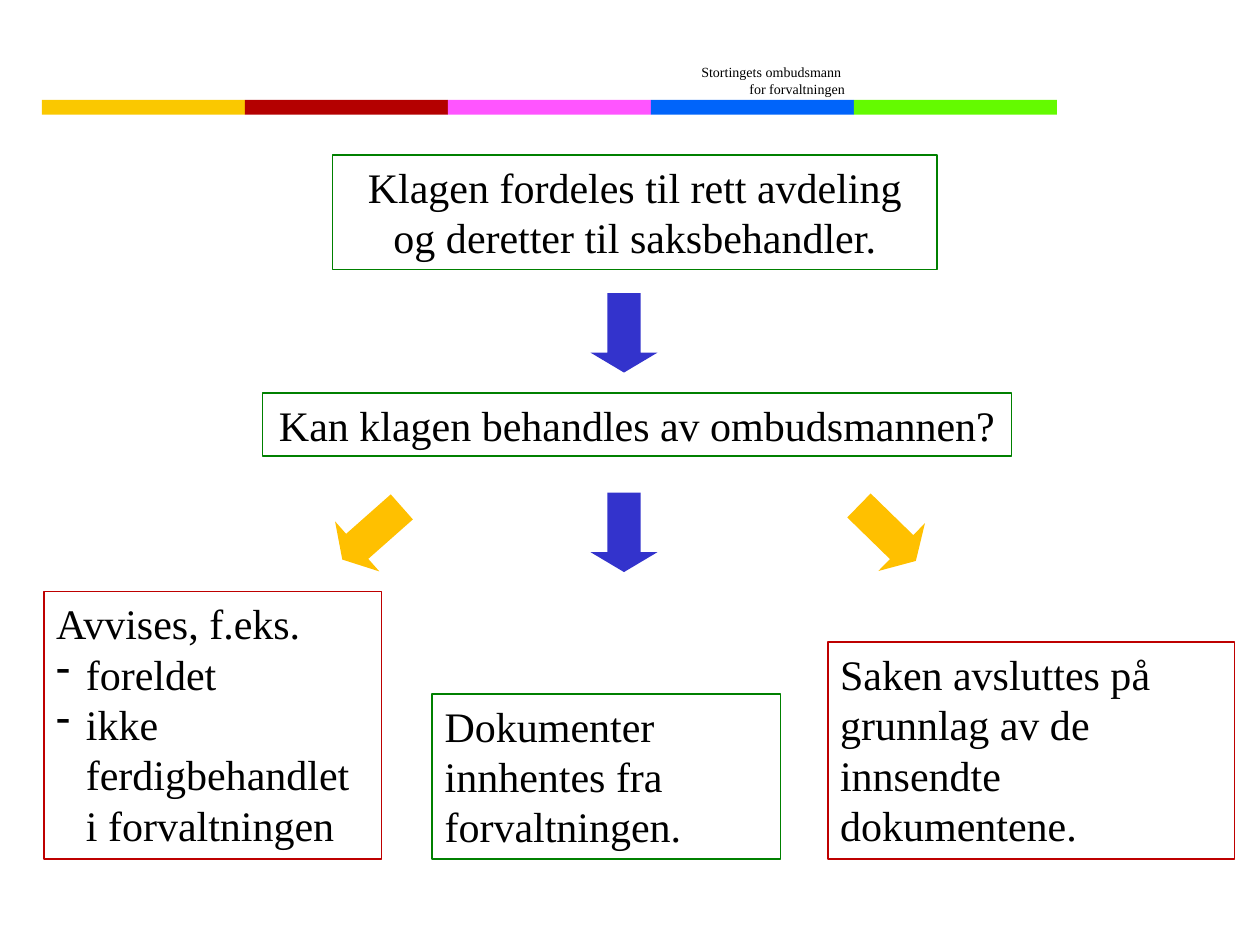
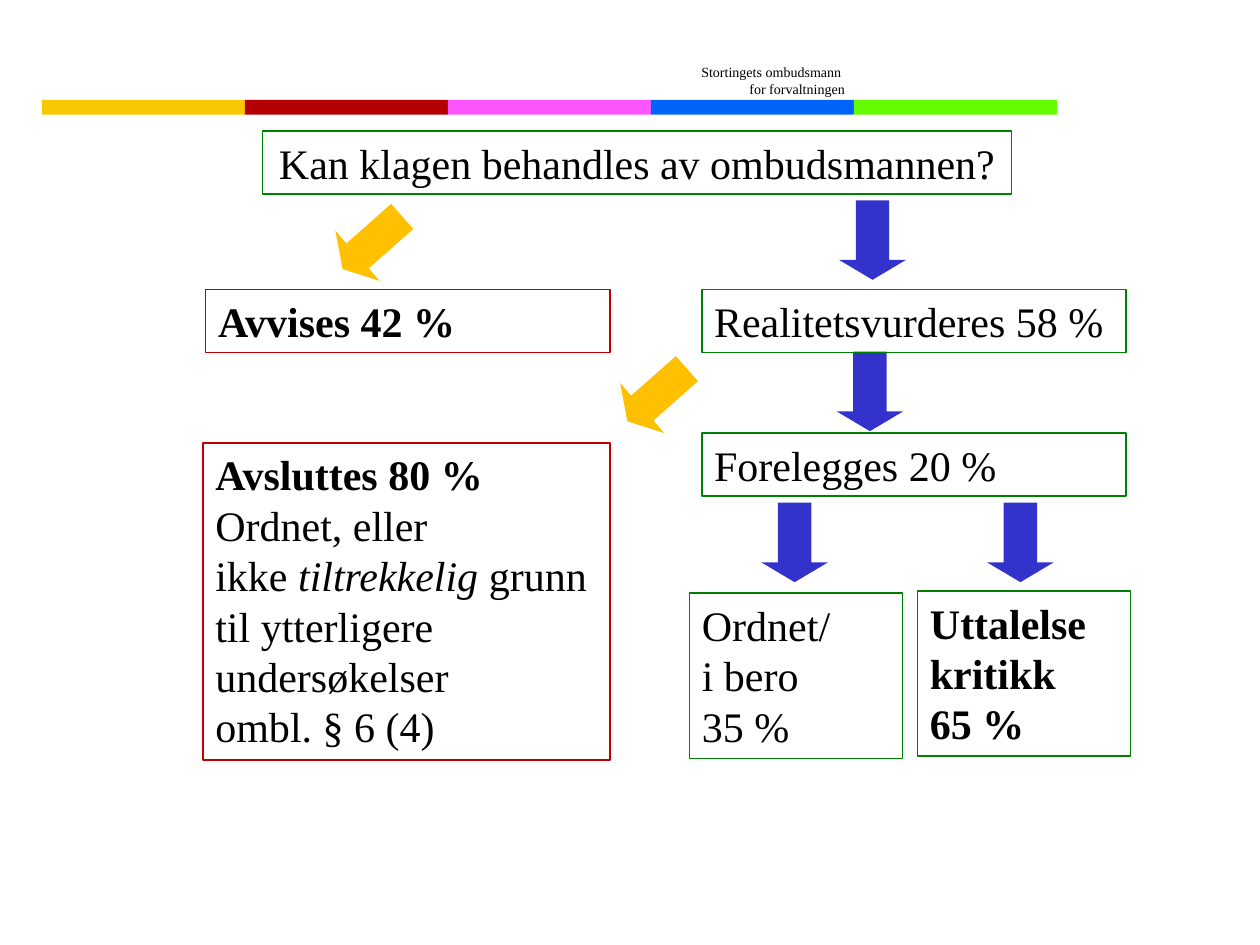
from collections import namedtuple

from lxml.etree import SubElement
from pptx import Presentation
from pptx.dml.color import RGBColor
from pptx.enum.shapes import MSO_SHAPE as Shape
from pptx.enum.text import MSO_ANCHOR as Anchor, PP_ALIGN as Align
from pptx.oxml.ns import qn
from pptx.util import Pt

BLACK = RGBColor(0x00, 0x00, 0x00)
GREEN = RGBColor(0x00, 0x80, 0x00)
RED = RGBColor(0xBE, 0x00, 0x00)
BLUE = RGBColor(0x33, 0x33, 0xCC)
AMBER = RGBColor(0xFF, 0xC0, 0x00)
BANDS = [
    RGBColor(0xFA, 0xC8, 0x00),
    RGBColor(0xB4, 0x00, 0x00),
    RGBColor(0xFF, 0x55, 0xFF),
    RGBColor(0x00, 0x64, 0xFA),
    RGBColor(0x64, 0xFA, 0x00),
]
FONT = "Times New Roman"
ROW_HEIGHT = 36
ARROW_WIDTH, ARROW_HEIGHT = 38.2, 45.4
LEFT_TURN, RIGHT_TURN = 48.5, 314.3

Box = namedtuple("Box", "left top width height")


def inside(box, left, top, width, height):
    """Return a box placed relative to the corner of another."""
    return Box(box.left + left, box.top + top, width, height)


def add_block(slide, kind, box):
    """Add a preset shape without shadow."""
    block = slide.shapes.add_shape(kind, *map(Pt, box))
    block.shadow.inherit = False
    return block


def add_filled(slide, kind, box, colour):
    """Add a solid shape without outline."""
    block = add_block(slide, kind, box)
    block.fill.solid()
    block.fill.fore_color.rgb = colour
    block.line.fill.background()
    return block


def add_arrow(slide, area, left, top, colour=BLUE, turn=0):
    """Add a downward arrow, turned if asked."""
    box = inside(area, left, top, ARROW_WIDTH, ARROW_HEIGHT)
    arrow = add_filled(slide, Shape.DOWN_ARROW, box, colour)
    arrow.adjustments[0] = 0.5
    arrow.adjustments[1] = 0.297
    arrow.rotation = turn


def style_text(frame, size, align):
    """Give every paragraph and run the common look."""
    for paragraph in frame.paragraphs:
        paragraph.alignment = align
        for run in paragraph.runs:
            run.font.name = FONT
            run.font.size = Pt(size)
            run.font.color.rgb = BLACK


def add_card(slide, box, text, edge=GREEN, align=Align.LEFT):
    """Add an outlined card and return its paragraphs."""
    card = add_block(slide, Shape.RECTANGLE, box)
    card.fill.background()
    card.line.color.rgb = edge
    card.line.width = Pt(1)
    frame = card.text_frame
    frame.word_wrap = True
    frame.vertical_anchor = Anchor.TOP
    frame.text = text
    style_text(frame, 24, align)
    return frame.paragraphs


def embolden(paragraphs):
    """Set the given paragraphs in bold."""
    for paragraph in paragraphs:
        for run in paragraph.runs:
            run.font.bold = True


def add_dashes(paragraphs):
    """Give paragraphs a hanging dash."""
    for paragraph in paragraphs:
        properties = paragraph._p.get_or_add_pPr()
        properties.set("marL", str(Pt(17)))
        properties.set("indent", str(Pt(-17)))
        SubElement(properties, qn("a:buChar")).set("char", "-")


def draw_header(slide, box):
    """Draw the sender's name above the row of coloured bands."""
    width = box.width / len(BANDS)
    for index, colour in enumerate(BANDS):
        band = inside(box, index * width, 34, width, 8.6)
        add_filled(slide, Shape.RECTANGLE, band, colour)
    sender = slide.shapes.add_textbox(*map(Pt, inside(box, 350, 0, width, 36)))
    frame = sender.text_frame
    frame.word_wrap = True
    frame.vertical_anchor = Anchor.BOTTOM
    frame.text = "Stortingets ombudsmann \vfor forvaltningen"
    style_text(frame, 8, Align.RIGHT)


def draw_question(slide, area, left, top):
    """Draw the question both flows turn on."""
    box = inside(area, left, top, 428, ROW_HEIGHT)
    add_card(slide, box, "Kan klagen behandles av ombudsmannen?", align=Align.CENTER)


def draw_intake(slide, box):
    """Draw how a complaint is distributed and sorted."""
    add_card(slide, inside(box, 165, 0, 345.6, 65.5),
             "Klagen fordeles til rett avdeling og deretter til saksbehandler.",
             align=Align.CENTER)
    draw_question(slide, box, 125, 136)
    for top in (79, 193):
        add_arrow(slide, box, 312.5, top)
    add_arrow(slide, box, 168.5, 193.5, AMBER, LEFT_TURN)
    add_arrow(slide, box, 463, 193.5, AMBER, RIGHT_TURN)

    outcomes = [
        (0, 193, 153, RED, "Avvises, f.eks.\nforeldet\nikke ferdigbehandlet i forvaltningen"),
        (222, 199, 94.5, GREEN, "Dokumenter innhentes fra forvaltningen."),
        (448, 232.5, 124, RED, "Saken avsluttes på grunnlag av de innsendte dokumentene."),
    ]
    for left, width, height, edge, text in outcomes:
        place = inside(box, left, box.height - height, width, height)
        lines = add_card(slide, place, text, edge)
        add_dashes(lines[1:])


def draw_results(slide, box):
    """Draw the share of complaints ending in each outcome."""
    draw_question(slide, box, 34, 0)
    for left, top in ((363.5, 39.5), (362, 126), (319, 212.3), (448, 212.3)):
        add_arrow(slide, box, left, top)
    for left, top in ((77.7, 41), (240.4, 128)):
        add_arrow(slide, box, left, top, AMBER, LEFT_TURN)

    rejected = inside(box, 1.5, 90.5, 231, ROW_HEIGHT)
    embolden(add_card(slide, rejected, "Avvises 42 %", RED))
    for top, text in ((90.5, "Realitetsvurderes 58 %"), (172.5, "Forelegges 20 %")):
        add_card(slide, inside(box, 285, top, 242.6, ROW_HEIGHT), text)

    closed = add_card(slide, inside(box, 0, 178, 232.6, 181.4),
                      "Avsluttes 80 %\nOrdnet, eller\nikke \nombl. § 6 (4)", RED)
    embolden(closed[:1])
    reason = closed[2]
    for text, italic in (("tiltrekkelig", True),
                         (" grunn til ytterligere undersøkelser", False)):
        run = reason.add_run()
        run.text = text
        run.font.name = FONT
        run.font.size = Pt(24)
        run.font.italic = italic
        run.font.color.rgb = BLACK

    add_card(slide, inside(box, 278, 264, 121.7, 94.5), "Ordnet/\ni bero\n35 %")
    criticism = inside(box, 408.3, 262.7, 121.7, 94.5)
    embolden(add_card(slide, criticism, "Uttalelse kritikk\n65 %"))


def main():
    """Build and save both slides."""
    deck = Presentation()
    deck.slide_width, deck.slide_height = Pt(720), Pt(540)
    flows = [
        (draw_intake, Box(25, 88.5, 681, 402.5)),
        (draw_results, Box(116, 75, 530, 360)),
    ]
    for draw_flow, box in flows:
        slide = deck.slides.add_slide(deck.slide_layouts[6])
        draw_header(slide, Box(24, 23, 580, 43))
        draw_flow(slide, box)
    deck.save("out.pptx")


if __name__ == "__main__":
    main()
